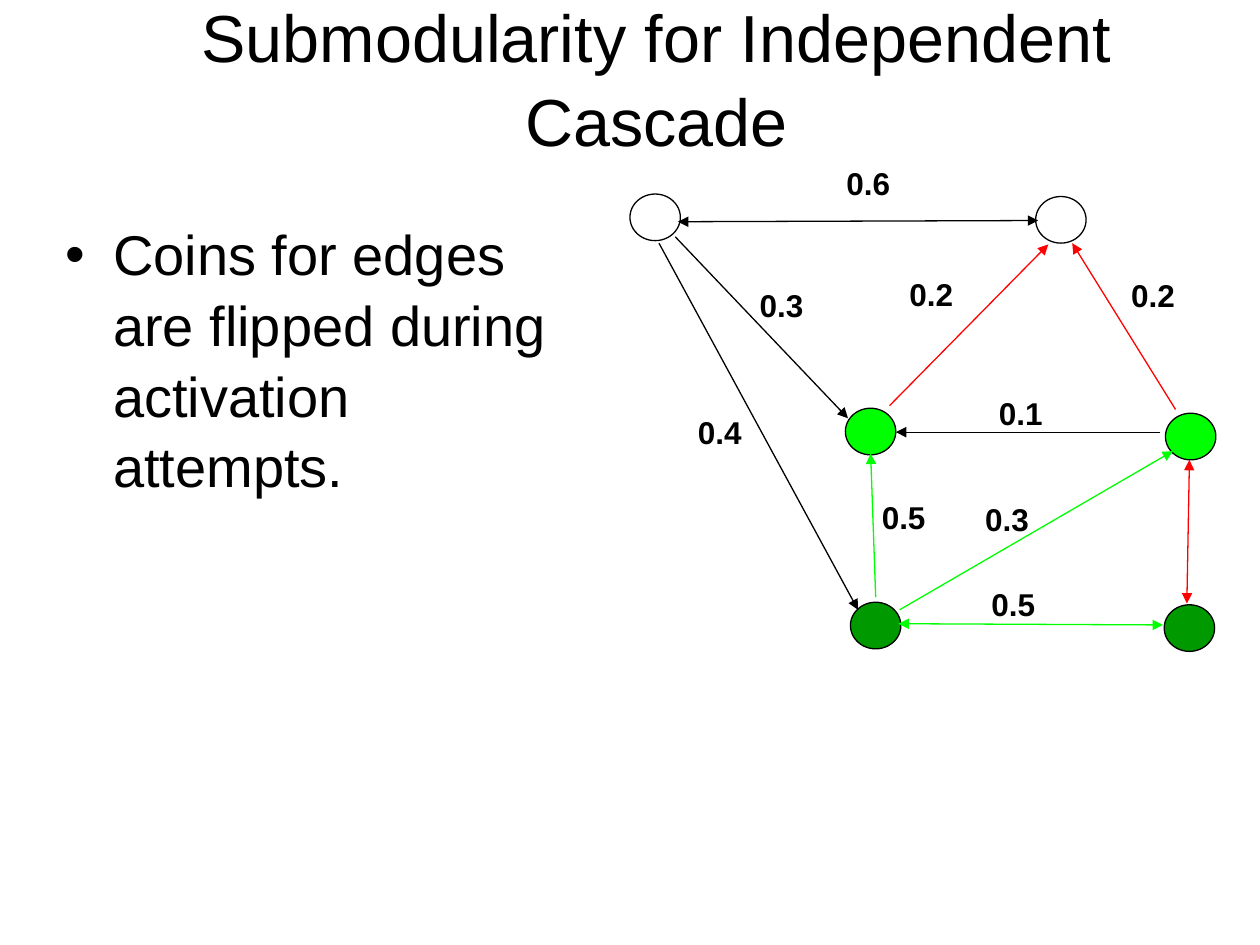
"""Build a slide showing an independent cascade on a weighted graph."""
import lxml.etree
import pptx
import pptx.dml.color
import pptx.enum.shapes
import pptx.enum.text
import pptx.oxml.ns
import pptx.util

TITLE = "Submodularity for Independent Cascade"
BODY = "Coins for edges are flipped during activation attempts."
BLACK, RED, LIME, GREEN, WHITE = "000000", "FF0000", "00FF00", "009900", "FFFFFF"
NODE_SIZE = (0.4, 0.37)
LABEL_SIZE = (0.67, 0.4)
ONE_WAY, BOTH_WAYS = ("tailEnd",), ("headEnd", "tailEnd")

NODES = [
    (5, 1.54, WHITE), (8.22, 1.56, WHITE),
    (6.71, 3.24, LIME), (9.25, 3.28, LIME),
    (6.75, 4.78, GREEN), (9.24, 4.8, GREEN),
]
EDGES = [
    ((7.13, 4.95), (9.23, 4.96), LIME, BOTH_WAYS),
    ((7.14, 4.84), (9.31, 3.58), LIME, ONE_WAY),
    ((6.95, 4.74), (6.91, 3.6), LIME, ONE_WAY),
    ((9.21, 3.43), (7.11, 3.43), BLACK, ONE_WAY),
    ((5.23, 1.93), (6.81, 4.84), BLACK, ONE_WAY),
    ((5.36, 1.88), (6.73, 3.32), BLACK, ONE_WAY),
    ((7.06, 3.22), (8.32, 1.94), RED, ONE_WAY),
    ((5.38, 1.76), (8.24, 1.75), BLACK, BOTH_WAYS),
    ((9.33, 3.25), (8.51, 1.93), RED, ONE_WAY),
    ((9.44, 3.65), (9.42, 4.79), RED, BOTH_WAYS),
]
LABELS = [
    ("0.5", 7.77, 4.59), ("0.3", 7.72, 3.92), ("0.5", 6.9, 3.9),
    ("0.1", 7.83, 3.08), ("0.4", 5.44, 3.23), ("0.3", 5.93, 2.22),
    ("0.2", 7.12, 2.13), ("0.6", 6.62, 1.25), ("0.2", 8.88, 2.14),
]


def color(value):
    return pptx.dml.color.RGBColor.from_string(value)


def inches(*values):
    return [pptx.util.Inches(value) for value in values]


def add_xml(parent, tag, **attributes):
    return lxml.etree.SubElement(parent, pptx.oxml.ns.qn(tag), **attributes)


def add_text(slide, text, place, size, bold=False, centered=False, bullet=False, spacing=1.0):
    box = slide.shapes.add_textbox(*inches(*place))
    frame = box.text_frame
    frame.word_wrap = True
    para = frame.paragraphs[0]
    para.line_spacing = spacing
    if centered:
        frame.vertical_anchor = pptx.enum.text.MSO_ANCHOR.MIDDLE
        para.alignment = pptx.enum.text.PP_ALIGN.CENTER
    if bullet:
        indent = pptx.util.Inches(0.38)
        properties = para._p.get_or_add_pPr()
        properties.set("marL", str(indent))
        properties.set("indent", str(-indent))
        add_xml(properties, "a:buFont", typeface="Arial")
        add_xml(properties, "a:buChar", char="•")
    span = para.add_run()
    span.text = text
    span.font.name = "Arial"
    span.font.size = pptx.util.Pt(size)
    span.font.bold = bold
    span.font.color.rgb = color(BLACK)


def set_line(line, value):
    line.color.rgb = color(value)
    line.width = pptx.util.Pt(0.75)


def add_node(slide, left, top, fill):
    node = slide.shapes.add_shape(
        pptx.enum.shapes.MSO_SHAPE.OVAL, *inches(left, top, *NODE_SIZE))
    node.shadow.inherit = False
    node.fill.solid()
    node.fill.fore_color.rgb = color(fill)
    set_line(node.line, BLACK)


def add_edge(slide, start, end, value, arrowheads):
    edge = slide.shapes.add_connector(
        pptx.enum.shapes.MSO_CONNECTOR.STRAIGHT, *inches(*start, *end))
    set_line(edge.line, value)
    for arrowhead in arrowheads:
        add_xml(edge.line._get_or_add_ln(), "a:" + arrowhead, type="triangle")
    add_xml(edge._element.spPr, "a:effectLst")


def main():
    deck = pptx.Presentation()
    deck.slide_width, deck.slide_height = inches(10, 7.5)
    page = deck.slides.add_slide(deck.slide_layouts[6])
    add_text(page, TITLE, (0.42, 0.25, 9.58, 0.7), 38, centered=True, spacing=1.05)
    add_text(page, BODY, (0.42, 1.67, 4.33, 1.62), 32, bullet=True, spacing=1.05)
    for node in NODES:
        add_node(page, *node)
    for edge in EDGES:
        add_edge(page, *edge)
    for text, left, top in LABELS:
        add_text(page, text, (left, top, *LABEL_SIZE), 18, bold=True)
    deck.save("out.pptx")


if __name__ == "__main__":
    main()
